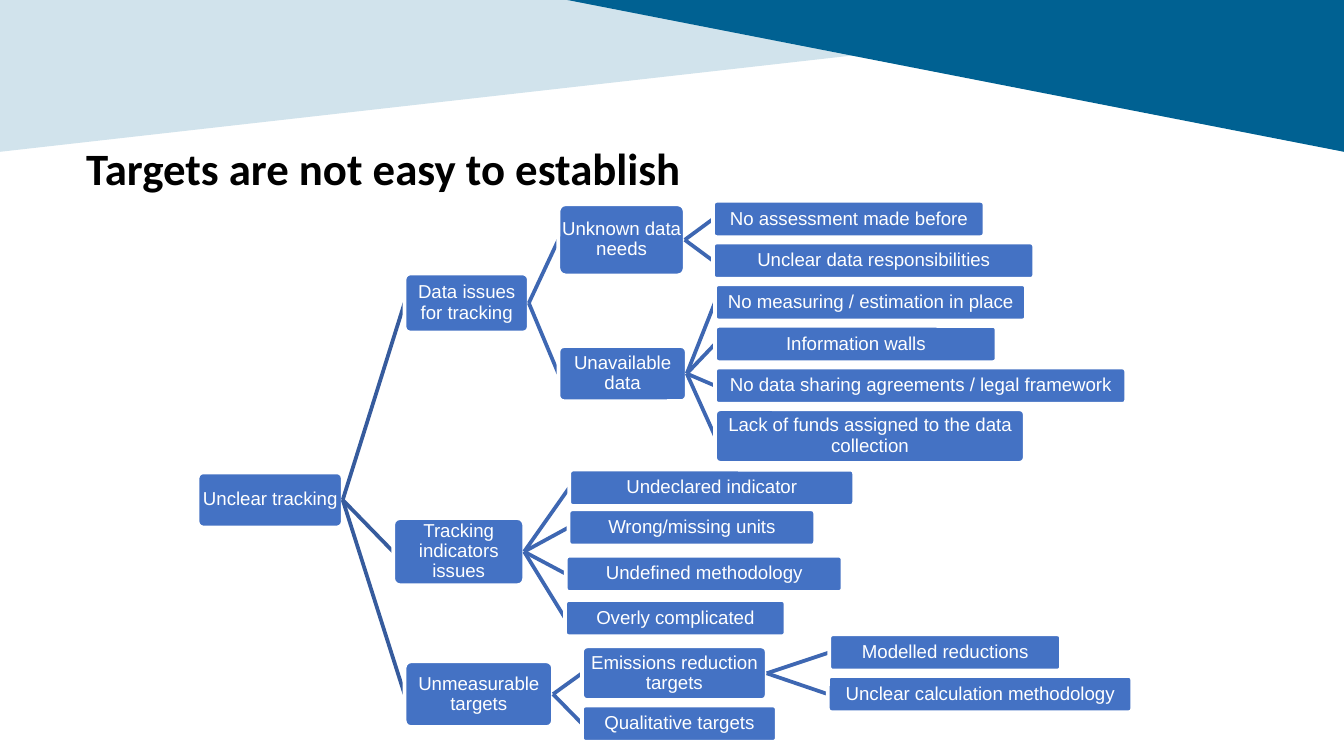
from dataclasses import dataclass

from lxml import etree
from pptx import Presentation
from pptx import util as u
from pptx.dml.color import RGBColor
from pptx.enum import shapes, text
from pptx.oxml.ns import qn

SCALE = 4572
COLORS = {
    "pale": "D1E3EC",
    "deep": "006192",
    "box": "4472C4",
    "trunk": "365B9D",
    "branch": "3E67B2",
    "white": "FFFFFF",
    "black": "000000",
}
BOX_FRAME = {
    "word_wrap": True,
    "vertical_anchor": text.MSO_ANCHOR.MIDDLE,
    "margin_left": 0,
    "margin_right": 0,
    "margin_top": 2 * SCALE,
    "margin_bottom": 2 * SCALE,
}
BOX_PARAGRAPH = {"alignment": text.PP_ALIGN.CENTER, "line_spacing": 0.9}
BOX_FONT = {"name": "Arial", "size": u.Pt(10)}
TITLE_FRAME = {
    "word_wrap": True,
    "auto_size": text.MSO_AUTO_SIZE.NONE,
    "vertical_anchor": text.MSO_ANCHOR.TOP,
    "margin_left": 14 * SCALE,
    "margin_right": 14 * SCALE,
    "margin_top": 8 * SCALE,
    "margin_bottom": 8 * SCALE,
}
TITLE_FONT = {"name": "Calibri", "size": u.Pt(24), "bold": True}


@dataclass(frozen=True)
class Issue:
    label: str
    left: int
    top: int
    width: int
    height: int = 54
    causes: tuple["Issue", ...] = ()

    @property
    def middle(self) -> int:
        return self.top + self.height // 2


@dataclass(frozen=True)
class Triangle:
    corners: tuple[tuple[int, int], ...]
    color: str


BANNER = (
    Triangle(((0, 0), (2000, 0), (0, 226)), "pale"),
    Triangle(((2000, 0), (844, 0), (2000, 226)), "deep"),
)

UNCLEAR_TRACKING = Issue("Unclear tracking", 294, 703, 216, 82, (
    Issue("Data issues for tracking", 602, 407, 185, 88, (
        Issue("Unknown data needs", 831, 304, 188, 106, (
            Issue("No assessment made before", 1061, 299, 404),
            Issue("Unclear data responsibilities", 1061, 361, 478),
        )),
        Issue("Unavailable data", 831, 515, 191, 82, (
            Issue("No measuring / estimation in place", 1064, 423, 463),
            Issue("Information walls", 1064, 485, 419),
            Issue("No data sharing agreements / legal framework", 1064, 547, 612),
            Issue("Lack of funds assigned to the data collection", 1064, 609, 461, 80),
        )),
    )),
    Issue("Tracking indicators issues", 585, 771, 195, 100, (
        Issue("Undeclared indicator", 847, 699, 424),
        Issue("Wrong/missing units", 846, 758, 367),
        Issue("Undefined methodology", 842, 827, 412),
        Issue("Overly complicated", 841, 893, 328),
    )),
    Issue("Unmeasurable targets", 602, 984, 221, 98, (
        Issue("Emissions reduction targets", 866, 962, 275, 80, (
            Issue("Modelled reductions", 1234, 944, 345),
            Issue("Unclear calculation methodology", 1232, 1006, 453),
        )),
        Issue("Qualitative targets", 866, 1050, 290),
    )),
))


def px(*lengths: int) -> list[int]:
    return [length * SCALE for length in lengths]


def rgb(color: str) -> RGBColor:
    return RGBColor.from_string(COLORS[color])


def apply(target, values: dict) -> None:
    for name, value in values.items():
        setattr(target, name, value)


def draw_triangle(slide, triangle: Triangle) -> None:
    start, *others = triangle.corners
    builder = slide.shapes.build_freeform(*start, scale=SCALE)
    builder.add_line_segments(others, close=True)
    facet = builder.convert_to_shape()
    facet.shadow.inherit = False
    facet.fill.solid()
    facet.fill.fore_color.rgb = rgb(triangle.color)
    facet.line.fill.background()


def draw_title(slide, label: str) -> None:
    title = slide.shapes.title
    apply(title, dict(zip(("left", "top", "width", "height"), px(114, 202, 1238, 96))))
    title.text_frame.text = label
    apply(title.text_frame, TITLE_FRAME)
    paragraph = title.text_frame.paragraphs[0]
    paragraph.alignment = text.PP_ALIGN.LEFT
    apply(paragraph.font, TITLE_FONT)
    paragraph.font.color.rgb = rgb("black")


def draw_box(slide, issue: Issue) -> None:
    box = slide.shapes.add_shape(
        shapes.MSO_SHAPE.ROUNDED_RECTANGLE,
        *px(issue.left, issue.top, issue.width, issue.height),
    )
    box.adjustments[0] = 0.1
    box.shadow.inherit = False
    box.fill.solid()
    box.fill.fore_color.rgb = rgb("box")
    box.line.color.rgb = rgb("white")
    box.line.width = u.Pt(2)
    box.text_frame.text = issue.label
    apply(box.text_frame, BOX_FRAME)
    paragraph = box.text_frame.paragraphs[0]
    apply(paragraph, BOX_PARAGRAPH)
    apply(paragraph.font, BOX_FONT)
    paragraph.font.color.rgb = rgb("white")


def draw_link(slide, issue: Issue, cause: Issue, color: str) -> None:
    link = slide.shapes.add_connector(
        shapes.MSO_CONNECTOR.STRAIGHT,
        *px(issue.left + issue.width, issue.middle, cause.left, cause.middle),
    )
    link.line.color.rgb = rgb(color)
    link.line.width = u.Pt(2)
    etree.SubElement(link._element.spPr, qn("a:effectLst"))


def draw_tree(slide, issue: Issue, color: str = "trunk") -> None:
    draw_box(slide, issue)
    for cause in issue.causes:
        draw_link(slide, issue, cause, color)
        draw_tree(slide, cause, "branch")


def main() -> None:
    deck = Presentation()
    deck.slide_width, deck.slide_height = px(2000, 1125)
    slide = deck.slides.add_slide(deck.slide_layouts[5])
    for triangle in BANNER:
        draw_triangle(slide, triangle)
    draw_title(slide, "Targets are not easy to establish")
    draw_tree(slide, UNCLEAR_TRACKING)
    deck.save("out.pptx")


if __name__ == "__main__":
    main()
